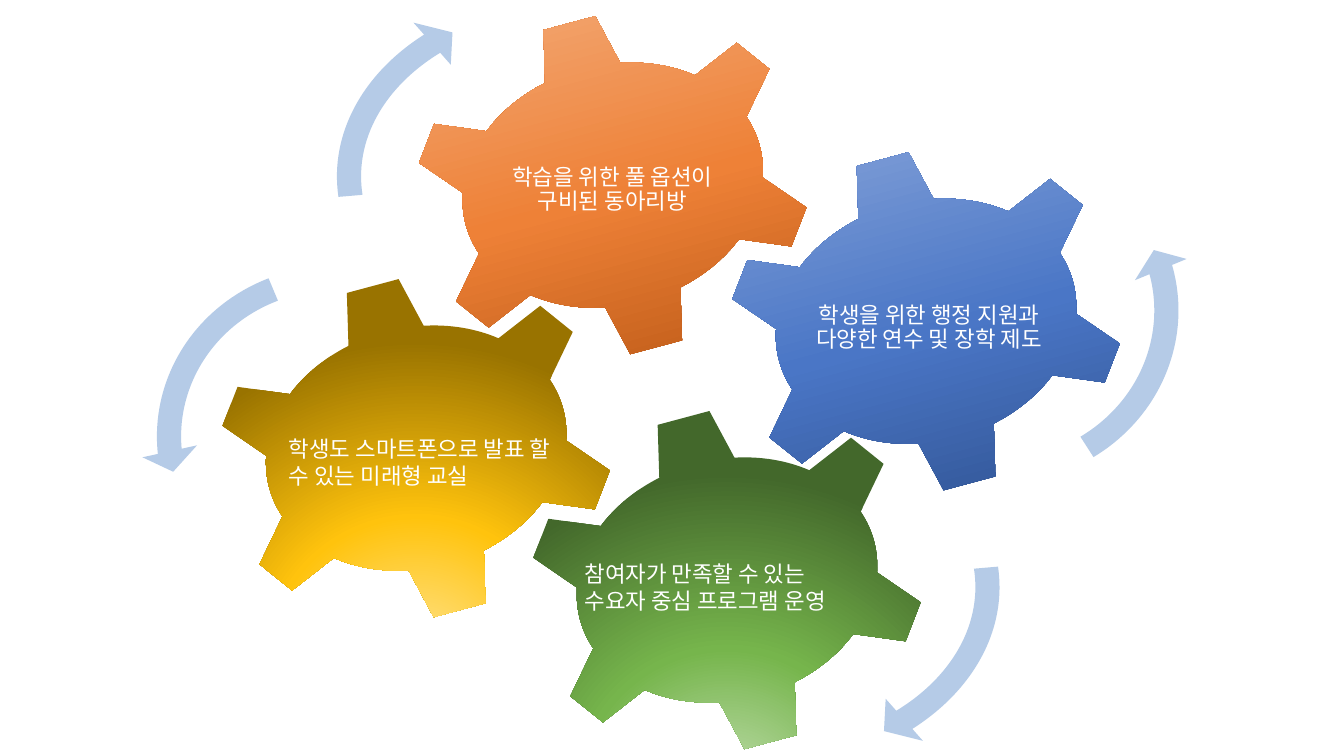
from lxml.etree import SubElement
from pptx import Presentation
from pptx.dml.color import RGBColor
from pptx.enum.shapes import MSO_SHAPE
from pptx.enum.text import MSO_ANCHOR, PP_ALIGN
from pptx.oxml import parse_xml
from pptx.oxml.ns import nsdecls, qn
from pptx.util import Inches, Pt

COLORS = {
    "arrow": "B5CBE7",
    "text": "FFFFFF",
    "orange": ((0, "B0500F"), (48, "EE8137"), (100, "F4B183")),
    "blue": ((0, "2A4B86"), (48, "4A76C6"), (100, "8FAADC")),
    "yellow": ((0, "FFE699"), (46, "FFC30D"), (100, "997300")),
    "green": ((0, "C5E0B4"), (46, "76B54C"), (100, "43682B")),
}
UPWARD = '<a:lin ang="16200000" scaled="0"/>'
FROM_BELOW = (
    '<a:path path="circle">'
    '<a:fillToRect l="50000" t="130000" r="50000" b="-30000"/></a:path>'
)
GEAR_SIZE = (4.85, 4.09)
CLOCKWISE = (MSO_SHAPE.CIRCULAR_ARROW, (6.17, 4.78),
             (0.06, 3.941, 133.138, 105.082, 0.07))
COUNTERCLOCKWISE = (MSO_SHAPE.LEFT_CIRCULAR_ARROW, (4.61, 4.43),
                    (0.065, 4.3, 104.891, 148.378, 0.075))


class GearSlide:
    """Draws gears, labels and arrows on a grid of 16 columns by 9 rows."""

    font_name = "Noto Sans CJK KR"
    font_size = Pt(16)

    def __init__(self, presentation):
        self.slide = presentation.slides.add_slide(presentation.slide_layouts[6])
        self.column = presentation.slide_width / 16
        self.row = presentation.slide_height / 9

    def box(self, position, size):
        left, top = position
        width, height = size
        return (round(left * self.column), round(top * self.row),
                round(width * self.column), round(height * self.row))

    def preset(self, kind, position, size, rotation):
        shape = self.slide.shapes.add_shape(kind, *self.box(position, size))
        shape.rotation = rotation
        shape.shadow.inherit = False
        shape.line.fill.background()
        return shape

    def gear(self, position, color, direction):
        shape = self.preset(MSO_SHAPE.GEAR_6, position, GEAR_SIZE, 345)
        stops = "".join(
            f'<a:gs pos="{percent * 1000}"><a:srgbClr val="{value}"/></a:gs>'
            for percent, value in COLORS[color]
        )
        gradient = parse_xml(
            f'<a:gradFill {nsdecls("a")} rotWithShape="1">'
            f"<a:gsLst>{stops}</a:gsLst>{direction}</a:gradFill>"
        )
        shape._element.spPr.find(qn("a:prstGeom")).addnext(gradient)

    def label(self, position, size, text, centered):
        shape = self.slide.shapes.add_textbox(*self.box(position, size))
        frame = shape.text_frame
        frame.word_wrap = True
        frame.vertical_anchor = MSO_ANCHOR.MIDDLE
        frame.margin_left = frame.margin_right = round(0.02 * self.column)
        frame.margin_top = frame.margin_bottom = round(0.02 * self.row)
        paragraph = frame.paragraphs[0]
        if centered:
            paragraph.alignment = PP_ALIGN.CENTER
            paragraph.line_spacing = 0.9
        run = paragraph.add_run()
        run.text = text
        run.font.size = self.font_size
        run.font.name = self.font_name
        run.font.color.rgb = RGBColor.from_string(COLORS["text"])
        east_asian = SubElement(run.font._element, qn("a:ea"))
        east_asian.set("typeface", self.font_name)

    def arrow(self, style, position, rotation=0):
        kind, size, adjustments = style
        shape = self.preset(kind, position, size, rotation)
        for index, value in enumerate(adjustments):
            shape.adjustments[index] = value
        shape.fill.solid()
        shape.fill.fore_color.rgb = RGBColor.from_string(COLORS["arrow"])


def main():
    presentation = Presentation()
    presentation.slide_width = Inches(13.33)
    presentation.slide_height = Inches(7.5)
    page = GearSlide(presentation)

    page.arrow(CLOCKWISE, (5.92, 4.6), 180)
    gears = (
        ("orange", UPWARD, (4.87, 0.16), (5.86, 1.04), (2.86, 2.44),
         "학습을 위한 풀 옵션이 구비된 동아리방"),
        ("blue", UPWARD, (8.6, 1.78), (9.4, 2.74), (3.32, 2.34),
         "학생을 위한 행정 지원과 다양한 연수 및 장학 제도"),
        ("yellow", FROM_BELOW, (2.53, 3.29), (3.42, 4.33), (3.2, 2.34),
         "학생도 스마트폰으로 발표 할 수 있는 미래형 교실"),
        ("green", FROM_BELOW, (6.23, 4.86), (6.94, 5.82), (3.29, 2.34),
         "참여자가 만족할 수 있는 수요자 중심 프로그램 운영"),
    )
    for color, direction, gear_position, label_position, label_size, text in gears:
        page.gear(gear_position, color, direction)
        page.label(label_position, label_size, text, direction == UPWARD)
    page.arrow(CLOCKWISE, (3.82, -0.29))
    page.arrow(COUNTERCLOCKWISE, (1.68, 2.98))
    page.arrow(COUNTERCLOCKWISE, (9.61, 1.51), 170)

    presentation.save("out.pptx")


if __name__ == "__main__":
    main()
